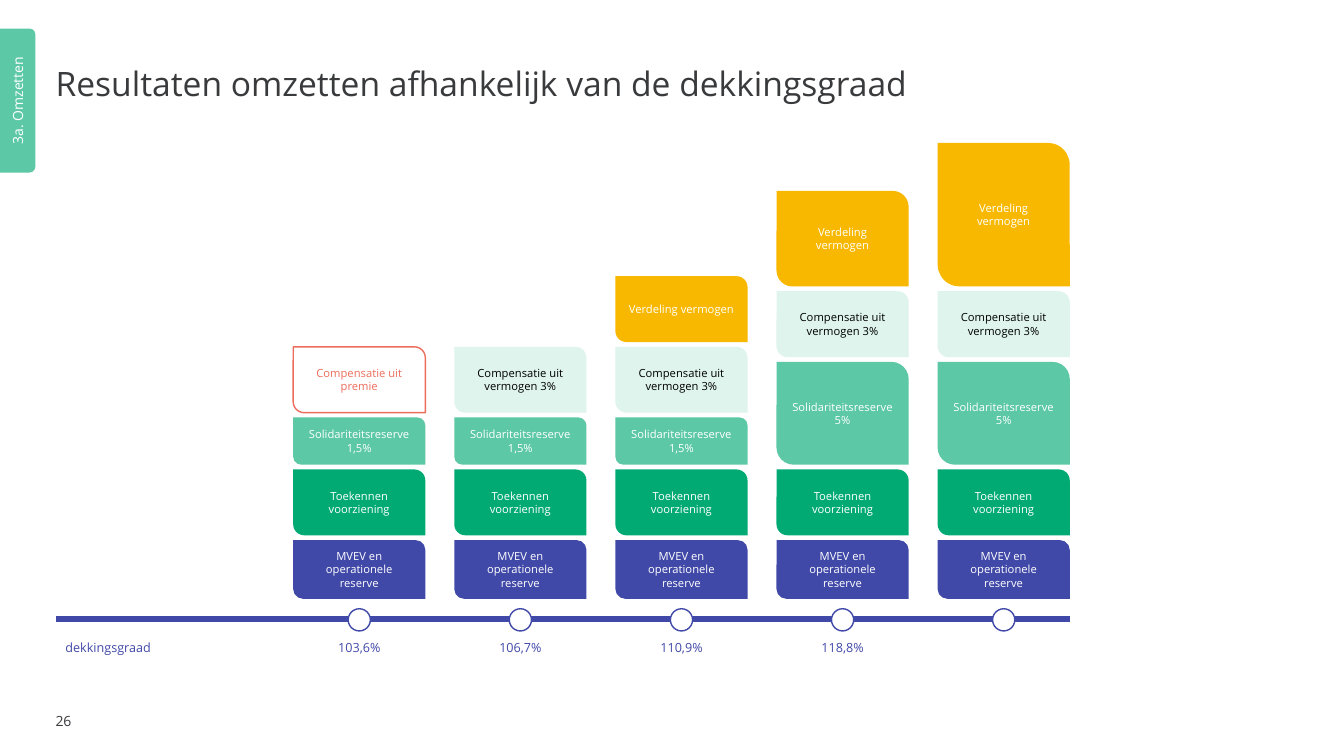
from lxml import etree
from pptx import Presentation
from pptx.dml.color import RGBColor
from pptx.enum.shapes import MSO_CONNECTOR, MSO_SHAPE
from pptx.enum.text import MSO_ANCHOR, PP_ALIGN
from pptx.oxml.ns import qn
from pptx.util import Cm, Pt

LEFT, CENTER = PP_ALIGN.LEFT, PP_ALIGN.CENTER
TOP, MIDDLE = MSO_ANCHOR.TOP, MSO_ANCHOR.MIDDLE
BLOCK, TAB, DOT = MSO_SHAPE.ROUND_2_DIAG_RECTANGLE, MSO_SHAPE.ROUND_2_SAME_RECTANGLE, MSO_SHAPE.OVAL

FONT = "Open Sans"
INK, WHITE, BLACK = "393A3C", "FFFFFF", "000000"
INDIGO, GREEN, MINT, PALE = "4149A8", "00AA72", "5CC8A5", "DEF4ED"
CORAL, YELLOW = "ED6D5C", "F8B800"

TITLE = "Resultaten omzetten afhankelijk van de dekkingsgraad"
CHAPTER = "3a. Omzetten"
PAGE = "26"
AXIS = "dekkingsgraad"

# Blocks: text, height in cm, fill, text colour, outline
RESERVE = ("MVEV en operationele reserve", 1.48, INDIGO, WHITE, None)
PROVISION = ("Toekennen voorziening", 1.66, GREEN, WHITE, None)
SOLIDARITY_LOW = ("Solidariteitsreserve 1,5%", 1.19, MINT, WHITE, None)
SOLIDARITY_HIGH = ("Solidariteitsreserve 5%", 2.59, MINT, WHITE, None)
FROM_PREMIUM = ("Compensatie uit premie", 1.66, WHITE, CORAL, CORAL)
FROM_CAPITAL = ("Compensatie uit vermogen 3%", 1.66, PALE, BLACK, None)


def distribution(height):
    return ("Verdeling vermogen", height, YELLOW, WHITE, None)


# Columns: funding ratio, blocks above the reserve and provision
COLUMNS = [
    ("103,6%", [SOLIDARITY_LOW, FROM_PREMIUM]),
    ("106,7%", [SOLIDARITY_LOW, FROM_CAPITAL]),
    ("110,9%", [SOLIDARITY_LOW, FROM_CAPITAL, distribution(1.66)]),
    ("118,8%", [SOLIDARITY_HIGH, FROM_CAPITAL, distribution(2.41)]),
    (None, [SOLIDARITY_HIGH, FROM_CAPITAL, distribution(3.62)]),
]

# Layout in cm
MARGIN = 1.4
COLUMN_LEFT, COLUMN_STEP, COLUMN_WIDTH = 7.39, 4.06, 3.33
STACK_BOTTOM, STACK_GAP = 15.09, 0.12
AXIS_Y, AXIS_RIGHT = 15.6, 26.97
DOT_SIZE, DOT_Y = 0.56, 15.62
RATIO_TOP, RATIO_WIDTH = 16, 2.95
TAB_BOX = (-1.37, 2.09, 3.63, 0.89)


def color(code):
    return RGBColor.from_string(code)


def write(shape, text, size, ink, align=LEFT, anchor=TOP, insets=(0.25, 0.13)):
    frame = shape.text_frame
    frame.word_wrap = True
    frame.vertical_anchor = anchor
    frame.margin_left = frame.margin_right = Cm(insets[0])
    frame.margin_top = frame.margin_bottom = Cm(insets[1])
    paragraph = frame.paragraphs[0]
    paragraph.text = text
    paragraph.alignment = align
    paragraph.font.name = FONT
    paragraph.font.size = Pt(size)
    paragraph.font.color.rgb = color(ink)
    return paragraph


def add_text(slide, box, *args, **kwargs):
    label = slide.shapes.add_textbox(*map(Cm, box))
    return label, write(label, *args, **kwargs)


def add_filled(slide, kind, box, fill, outline=None):
    shape = slide.shapes.add_shape(kind, *map(Cm, box))
    shape.shadow.inherit = False
    shape.fill.solid()
    shape.fill.fore_color.rgb = color(fill)
    if outline:
        shape.line.color.rgb = color(outline)
        shape.line.width = Pt(1)
    else:
        shape.line.fill.background()
    return shape


def add_stack(slide, left, blocks):
    bottom = STACK_BOTTOM
    for text, height, fill, ink, outline in blocks:
        box = (left, bottom - height, COLUMN_WIDTH, height)
        block = add_filled(slide, BLOCK, box, fill, outline)
        # Round the top right and bottom left corners
        block.adjustments[0], block.adjustments[1] = 0, 0.16667
        write(block, text, 8, ink, CENTER, MIDDLE)
        bottom -= height + STACK_GAP


def add_axis(slide):
    axis = slide.shapes.add_connector(
        MSO_CONNECTOR.STRAIGHT, Cm(MARGIN), Cm(AXIS_Y), Cm(AXIS_RIGHT), Cm(AXIS_Y))
    axis.line.color.rgb = color(INDIGO)
    axis.line.width = Pt(4.5)
    etree.SubElement(axis._element.spPr, qn("a:effectLst"))
    add_text(slide, (MARGIN, RATIO_TOP, 3.76, 0.81), AXIS, 9, INDIGO)


def main():
    deck = Presentation()
    deck.slide_width, deck.slide_height = Cm(33.87), Cm(19.05)
    slide = deck.slides.add_slide(deck.slide_layouts[6])

    _, title = add_text(slide, (MARGIN, 0.71, 31.06, 2.9), TITLE, 24, INK,
                        anchor=MIDDLE, insets=(0, 0))
    title.line_spacing = 0.9
    add_text(slide, (MARGIN, 17.96, 0.89, 0.43), PAGE, 10, INK,
             anchor=MIDDLE, insets=(0, 0))

    add_filled(slide, TAB, TAB_BOX, MINT).rotation = 90
    chapter, _ = add_text(slide, TAB_BOX, CHAPTER, 10, WHITE, CENTER, MIDDLE,
                          insets=(0.5, 0.23))
    chapter.rotation = 270

    add_axis(slide)
    for index, (ratio, upper_blocks) in enumerate(COLUMNS):
        left = COLUMN_LEFT + index * COLUMN_STEP
        middle = left + COLUMN_WIDTH / 2
        add_stack(slide, left, [RESERVE, PROVISION, *upper_blocks])
        dot_box = (middle - DOT_SIZE / 2, DOT_Y - DOT_SIZE / 2, DOT_SIZE, DOT_SIZE)
        add_filled(slide, DOT, dot_box, WHITE, INDIGO)
        if ratio:
            ratio_box = (middle - RATIO_WIDTH / 2, RATIO_TOP, RATIO_WIDTH, 0.63)
            add_text(slide, ratio_box, ratio, 9, INDIGO, CENTER)

    deck.save("out.pptx")


if __name__ == "__main__":
    main()
